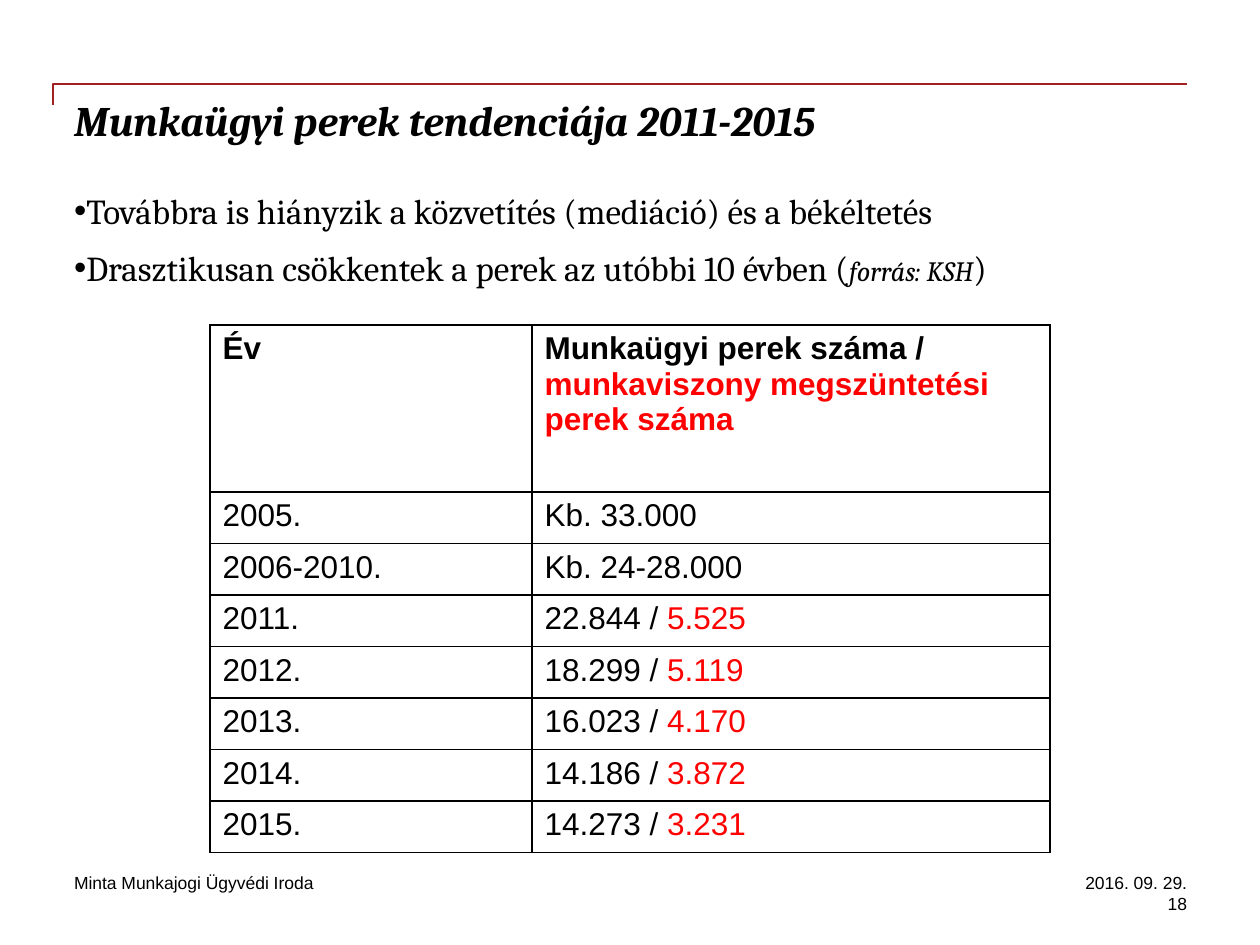
from lxml import etree
from pptx import Presentation
from pptx.dml.color import RGBColor
from pptx.enum import text
from pptx.oxml import ns
from pptx.util import Emu, Pt

PX = 914400 / 126
BLACK = RGBColor(0x00, 0x00, 0x00)
RED = RGBColor(0xFF, 0x00, 0x00)
CRIMSON = RGBColor(0xA3, 0x20, 0x20)


def px(length):
    return Emu(round(length * PX))


def add_run(paragraph, words, font="Arial", size=10, color=BLACK, bold=False, italic=False):
    run = paragraph.add_run()
    run.text = words
    run.font.name = font
    run.font.size = Pt(size)
    run.font.color.rgb = color
    run.font.bold = bold
    run.font.italic = italic


def child(parent, tag, **attributes):
    return etree.SubElement(parent, ns.qn(tag), **attributes)


class SlideBuilder:
    heading_font = "Cambria"
    table_size = 18

    def __init__(self, slide):
        self.slide = slide

    def rule(self, start, *corners):
        builder = self.slide.shapes.build_freeform(*start, scale=PX)
        builder.add_line_segments(corners, close=False)
        line = builder.convert_to_shape()
        line.shadow.inherit = False
        line.fill.background()
        line.line.color.rgb = CRIMSON
        line.line.width = Pt(1)

    def text_box(self, left, top, width, height, paragraphs, align=text.PP_ALIGN.LEFT,
                 anchor=text.MSO_ANCHOR.TOP, bullets=False):
        """Each paragraph is a list of (words, format) pairs."""
        box = self.slide.shapes.add_textbox(px(left), px(top), px(width), px(height))
        frame = box.text_frame
        frame.word_wrap = True
        frame.vertical_anchor = anchor
        frame.margin_left = frame.margin_right = frame.margin_top = frame.margin_bottom = 0
        for index, runs in enumerate(paragraphs):
            paragraph = frame.paragraphs[0] if index == 0 else frame.add_paragraph()
            paragraph.alignment = align
            if bullets:
                paragraph.space_after = Pt(9)
                properties = paragraph._p.get_or_add_pPr()
                properties.set("marL", "0")
                properties.set("indent", "0")
                child(properties, "a:buFont", typeface="Arial")
                child(properties, "a:buChar", char="•")
            for words, style in runs:
                add_run(paragraph, words, **style)

    def borders(self, cell):
        properties = cell._tc.get_or_add_tcPr()
        for side in ("a:lnL", "a:lnR", "a:lnT", "a:lnB"):
            fill = child(child(properties, side, w=str(Pt(1))), "a:solidFill")
            child(fill, "a:srgbClr", val=str(BLACK))

    def table(self, left, top, widths, header_height, row_height, rows):
        """Each row is (year, black words, red words)."""
        height = header_height + row_height * (len(rows) - 1)
        table = self.slide.shapes.add_table(
            len(rows), len(widths), px(left), px(top), px(sum(widths)), px(height)).table
        table.first_row = table.horz_banding = False
        for column, width in zip(table.columns, widths):
            column.width = px(width)
        for index, (year, total, dismissals) in enumerate(rows):
            table.rows[index].height = px(row_height if index else header_height)
            cells = table.rows[index].cells
            for cell, parts in zip(cells, ([(year, BLACK)], [(total, BLACK), (dismissals, RED)])):
                self.borders(cell)
                cell.fill.background()
                for words, color in parts:
                    if words:
                        add_run(cell.text_frame.paragraphs[0], words, size=self.table_size,
                                color=color, bold=index == 0)


def main():
    deck = Presentation()
    deck.slide_width, deck.slide_height = px(1260), px(945)
    page = SlideBuilder(deck.slides.add_slide(deck.slide_layouts[6]))

    # Heading with its corner rule
    page.rule((53, 105), (53, 84), (1187, 84))
    page.text_box(74, 95, 1113, 126, [[
        ("Munkaügyi perek tendenciája 2011-2015",
         dict(font=page.heading_font, size=24, bold=True, italic=True))]])

    # Bullets
    body = dict(font=page.heading_font, size=20)
    source = dict(font=page.heading_font, size=16, italic=True)
    page.text_box(74, 189, 1113, 662, [
        [("Továbbra is hiányzik a közvetítés (mediáció) és a békéltetés", body)],
        [("Drasztikusan csökkentek a perek az utóbbi 10 évben (", body),
         ("forrás: KSH", source), (")", body)],
    ], bullets=True)

    # Lawsuits per year
    page.table(210, 325, (322, 518), 167, 51.5, [
        ("Év", "Munkaügyi perek száma / ", "munkaviszony megszüntetési perek száma"),
        ("2005.", "Kb. 33.000", ""),
        ("2006-2010.", "Kb. 24-28.000", ""),
        ("2011.", "22.844 / ", "5.525"),
        ("2012.", "18.299 / ", "5.119"),
        ("2013.", "16.023 / ", "4.170"),
        ("2014.", "14.186 / ", "3.872"),
        ("2015.", "14.273 / ", "3.231"),
    ])

    # Footer
    page.text_box(74, 872, 725, 21, [[("Minta Munkajogi Ügyvédi Iroda", {})]],
                  anchor=text.MSO_ANCHOR.BOTTOM)
    for top, words in ((872, "2016. 09. 29."), (893, "18")):
        page.text_box(977, top, 210, 21, [[(words, {})]], align=text.PP_ALIGN.RIGHT)

    deck.save("out.pptx")


if __name__ == "__main__":
    main()
